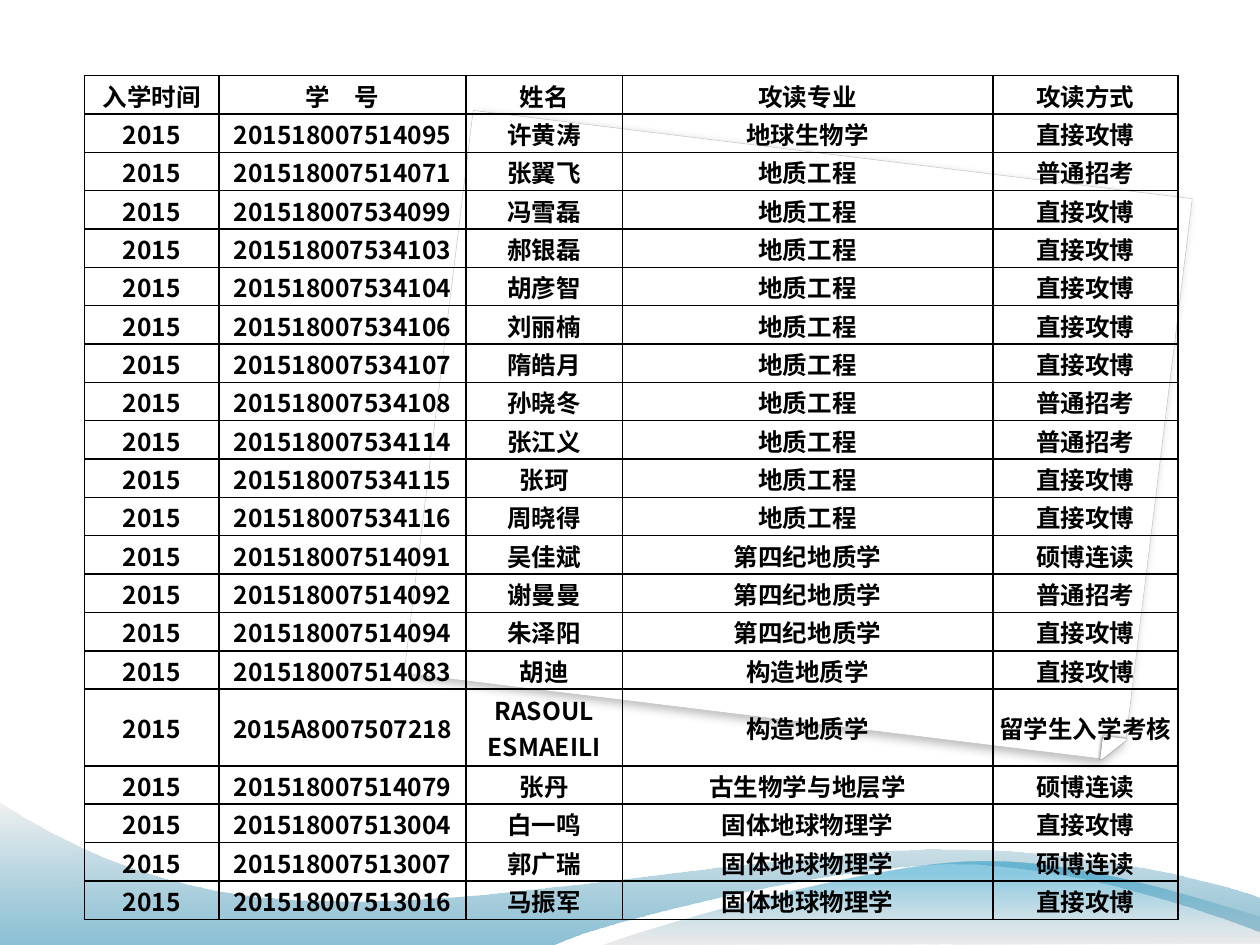
import lxml.etree
import pptx
import pptx.dml.color
import pptx.enum.shapes
import pptx.enum.text
import pptx.oxml.ns
import pptx.util

Inches = pptx.util.Inches
Pt = pptx.util.Pt
RGBColor = pptx.dml.color.RGBColor
qn = pptx.oxml.ns.qn

BLACK = RGBColor(0x00, 0x00, 0x00)
WHITE = RGBColor(0xFF, 0xFF, 0xFF)
SILVER = RGBColor(0xC0, 0xC0, 0xC0)
DEEP_BLUE = RGBColor(0x00, 0x74, 0xA1)
BRIGHT_BLUE = RGBColor(0x00, 0x8B, 0xBF)
PALE_GREY = RGBColor(0xE7, 0xE7, 0xE7)
MID_GREY = RGBColor(0xBD, 0xBD, 0xBD)

FONT = "Noto Sans CJK SC"
YEAR = "2015"
HEADER = ("入学时间", "学　号", "姓名", "攻读专业", "攻读方式")
TALL_NAME = "RASOUL ESMAEILI"
STUDENTS = [
    ("201518007514095", "许黄涛", "地球生物学", "直接攻博"),
    ("201518007514071", "张翼飞", "地质工程", "普通招考"),
    ("201518007534099", "冯雪磊", "地质工程", "直接攻博"),
    ("201518007534103", "郝银磊", "地质工程", "直接攻博"),
    ("201518007534104", "胡彦智", "地质工程", "直接攻博"),
    ("201518007534106", "刘丽楠", "地质工程", "直接攻博"),
    ("201518007534107", "隋皓月", "地质工程", "直接攻博"),
    ("201518007534108", "孙晓冬", "地质工程", "普通招考"),
    ("201518007534114", "张江义", "地质工程", "普通招考"),
    ("201518007534115", "张珂", "地质工程", "直接攻博"),
    ("201518007534116", "周晓得", "地质工程", "直接攻博"),
    ("201518007514091", "吴佳斌", "第四纪地质学", "硕博连读"),
    ("201518007514092", "谢曼曼", "第四纪地质学", "普通招考"),
    ("201518007514094", "朱泽阳", "第四纪地质学", "直接攻博"),
    ("201518007514083", "胡迪", "构造地质学", "直接攻博"),
    ("2015A8007507218", TALL_NAME, "构造地质学", "留学生入学考核"),
    ("201518007514079", "张丹", "古生物学与地层学", "硕博连读"),
    ("201518007513004", "白一鸣", "固体地球物理学", "直接攻博"),
    ("201518007513007", "郭广瑞", "固体地球物理学", "硕博连读"),
    ("201518007513016", "马振军", "固体地球物理学", "直接攻博"),
]
ROWS = [HEADER] + [(YEAR,) + student for student in STUDENTS]
COLUMN_WIDTHS = (1.07, 1.96, 1.24, 2.94, 1.47)
TABLE_LEFT, TABLE_TOP, TABLE_HEIGHT = 0.67, 0.6, 6.7

SHAPES = pptx.enum.shapes.MSO_SHAPE
PAPER_PARTS = [
    dict(kind=SHAPES.SNIP_ROUND_RECTANGLE, at=(3.46, 1.21, 5.75, 4.5), adjust=(0, 0.036),
         line=(SILVER, 0.25), shadow=(25, 5, 3, 125), stretch=dict(sx=98500, sy=100000, kx=100000)),
    dict(kind=SHAPES.RIGHT_TRIANGLE, at=(8.75, 5.86, 0.17, 0.17), adjust=(),
         line=(WHITE, 1), shadow=(47, 1.6, 0.5, 215), stretch={}),
]
PAPER_TILT = 7

WAVES = [
    dict(start=(0, 7.5),
         steps=[(4.4, 7.5), (4.76, 7.32, 6.64, 6.86, 7.58, 6.86),
                (8.53, 6.86, 9.58, 7.24, 10, 7.4), (10.01, 7.13),
                (9.83, 7.05, 8.7, 6.73, 7.46, 6.74),
                (6.22, 6.74, 3.82, 7.21, 2.57, 7.15),
                (1.29, 7.14, 0.46, 6.66, -0.01, 6.36)],
         stops=[(0, DEEP_BLUE, 45), (1, PALE_GREY, 55)]),
    dict(start=(4.79, 7.5),
         steps=[(5.09, 7.38, 6.82, 6.87, 7.69, 6.84),
                (8.56, 6.8, 9.61, 7.17, 10, 7.28), (10, 7.49)],
         stops=[(0, MID_GREY, 30), (0.8, BRIGHT_BLUE, 45)]),
]


def add_node(parent, tag, **attributes):
    return lxml.etree.SubElement(parent, qn(tag), {k: str(v) for k, v in attributes.items()})


def add_alpha(color_node, percent):
    add_node(color_node, "a:alpha", val=percent * 1000)


def add_paper_part(page, part):
    shape = page.shapes.add_shape(part["kind"], *map(Inches, part["at"]))
    for index, value in enumerate(part["adjust"]):
        shape.adjustments[index] = value
    shape.rotation = PAPER_TILT
    properties = shape.element.spPr
    properties.find(qn("a:xfrm")).set("flipV", "1")
    shape.fill.solid()
    shape.fill.fore_color.rgb = WHITE
    shape.line.color.rgb, width = part["line"]
    shape.line.width = Pt(width)
    shape.shadow.inherit = False
    opacity, blur, distance, angle = part["shadow"]
    shadow = add_node(properties.find(qn("a:effectLst")), "a:outerShdw", blurRad=Pt(blur),
                      dist=Pt(distance), dir=angle * 60000, algn="tl", rotWithShape=0,
                      **part["stretch"])
    add_alpha(add_node(shadow, "a:srgbClr", val=BLACK), opacity)


def bend_lines(shape, steps):
    lines = list(shape.element.spPr.iter(qn("a:lnTo")))
    for step in steps:
        count = len(step) // 2
        segment, lines = lines[:count], lines[count:]
        if count == 3:
            curve = lxml.etree.Element(qn("a:cubicBezTo"))
            segment[0].addprevious(curve)
            for line in segment:
                curve.append(line[0])
                line.getparent().remove(line)


def add_wave(page, wave):
    points = [pair for step in wave["steps"] for pair in zip(step[::2], step[1::2])]
    start, *points = [tuple(map(Inches, point)) for point in [wave["start"]] + points]
    builder = page.shapes.build_freeform(*start, scale=1.0)
    builder.add_line_segments(points, close=False)
    shape = builder.convert_to_shape()
    bend_lines(shape, wave["steps"])
    add_node(next(shape.element.spPr.iter(qn("a:moveTo"))).getparent(), "a:close")
    shape.shadow.inherit = False
    shape.line.fill.background()
    shape.fill.gradient()
    shape.fill.gradient_angle = 90
    for stop, (position, color, opacity) in zip(shape.fill.gradient_stops, wave["stops"]):
        stop.position = position
        stop.color.rgb = color
    colors = list(shape.element.spPr.find(qn("a:gradFill")).iter(qn("a:srgbClr")))
    for node, (position, color, opacity) in zip(colors, wave["stops"]):
        add_alpha(node, opacity)


def fill_cell(cell, text):
    cell.margin_left = cell.margin_right = cell.margin_top = Inches(0.01)
    cell.margin_bottom = 0
    cell.vertical_anchor = pptx.enum.text.MSO_ANCHOR.MIDDLE
    properties = cell._tc.get_or_add_tcPr()
    for side in ("a:lnL", "a:lnR", "a:lnT", "a:lnB"):
        border = add_node(properties, side, w=Pt(1))
        add_node(add_node(border, "a:solidFill"), "a:srgbClr", val=BLACK)
    cell.fill.background()
    para = cell.text_frame.paragraphs[0]
    para.alignment = pptx.enum.text.PP_ALIGN.CENTER
    run = para.add_run()
    run.text = text
    run.font.size = Pt(14)
    run.font.bold = True
    run.font.color.rgb = BLACK
    run.font.name = FONT
    add_node(run.font._element, "a:ea", typeface=FONT)


def add_student_table(page):
    frame = page.shapes.add_table(len(ROWS), len(HEADER), Inches(TABLE_LEFT), Inches(TABLE_TOP),
                                  Inches(sum(COLUMN_WIDTHS)), Inches(TABLE_HEIGHT))
    table = frame.table
    table.first_row = table.horz_banding = False
    for column, width in zip(table.columns, COLUMN_WIDTHS):
        column.width = Inches(width)
    line_height = TABLE_HEIGHT / (len(ROWS) + 1)
    for row, texts in zip(table.rows, ROWS):
        row.height = Inches(line_height * (2 if TALL_NAME in texts else 1))
        for cell, text in zip(row.cells, texts):
            fill_cell(cell, text)


def main():
    deck = pptx.Presentation()
    deck.slide_width, deck.slide_height = Inches(10), Inches(7.5)
    page = deck.slides.add_slide(deck.slide_layouts[6])
    page.background.fill.solid()
    page.background.fill.fore_color.rgb = WHITE
    for part in PAPER_PARTS:
        add_paper_part(page, part)
    for wave in WAVES:
        add_wave(page, wave)
    add_student_table(page)
    deck.save("out.pptx")


if __name__ == "__main__":
    main()
